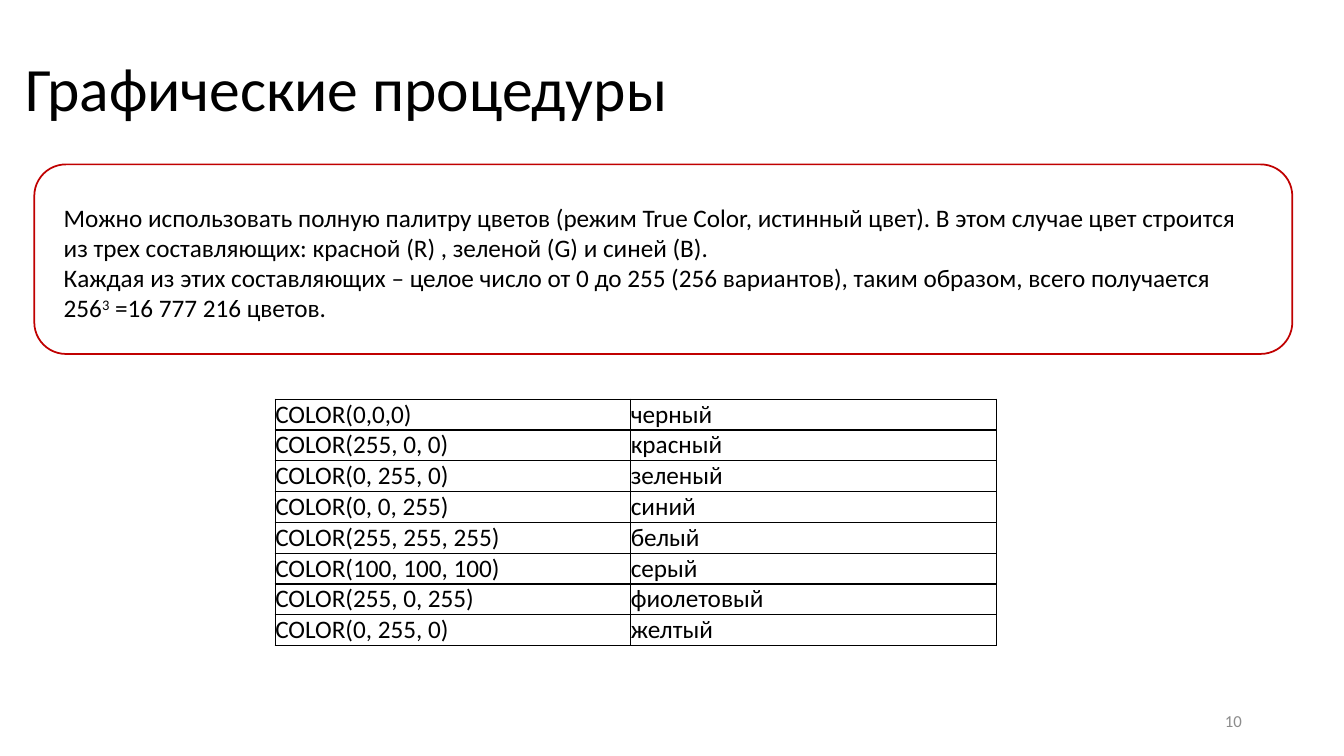
from typing import NamedTuple

from lxml import etree
from pptx import Presentation
from pptx.dml.color import RGBColor
from pptx.enum.shapes import MSO_SHAPE
from pptx.enum.text import MSO_ANCHOR, PP_ALIGN
from pptx.oxml.ns import qn
from pptx.util import Pt

ROUNDED = MSO_SHAPE.ROUNDED_RECTANGLE
TOP, MIDDLE, BOTTOM = MSO_ANCHOR.TOP, MSO_ANCHOR.MIDDLE, MSO_ANCHOR.BOTTOM
LEFT, RIGHT = PP_ALIGN.LEFT, PP_ALIGN.RIGHT

FONT = "Calibri"
BLACK = RGBColor(0x00, 0x00, 0x00)
WHITE = RGBColor(0xFF, 0xFF, 0xFF)
RED = RGBColor(0xC0, 0x00, 0x00)
GREY = RGBColor(0x8C, 0x8C, 0x8C)


class ColorRow(NamedTuple):
    call: str
    name: str


COLOR_ROWS = [
    ColorRow("COLOR(0,0,0)", "черный"),
    ColorRow("COLOR(255, 0, 0)", "красный"),
    ColorRow("COLOR(0, 255, 0)", "зеленый"),
    ColorRow("COLOR(0, 0, 255)", "синий"),
    ColorRow("COLOR(255, 255, 255)", "белый"),
    ColorRow("COLOR(100, 100, 100)", "серый"),
    ColorRow("COLOR(255, 0, 255)", "фиолетовый"),
    ColorRow("COLOR(0, 255, 0)", "желтый"),
]
COLUMN_WIDTHS = (254, 261)
ROW_HEIGHT = 22

# Text between a pair of ^ marks is superscript
PALETTE_TEXT = (
    "Можно использовать полную палитру цветов (режим True Color, истинный цвет). "
    "В этом случае цвет строится из трех составляющих: красной (R) , зеленой (G) и синей (B).\n"
    "Каждая из этих составляющих – целое число от 0 до 255 (256 вариантов), "
    "таким образом, всего получается 256^3^ =16 777 216 цветов."
)


def write_text(tf, text: str, *, size: float = 18, color: RGBColor = BLACK,
               align=LEFT, spacing: float = 1.0) -> None:
    for i, line in enumerate(text.split("\n")):
        p = tf.paragraphs[0] if i == 0 else tf.add_paragraph()
        p.alignment = align
        p.line_spacing = spacing
        for j, part in enumerate(line.split("^")):
            r = p.add_run()
            r.text = part
            r.font.name = FONT
            r.font.size = Pt(size)
            r.font.color.rgb = color
            if j % 2:
                r._r.get_or_add_rPr().set("baseline", "30000")


def add_text_box(s, left: float, top: float, width: float, height: float,
                 text: str, **style) -> None:
    tf = s.shapes.add_textbox(Pt(left), Pt(top), Pt(width), Pt(height)).text_frame
    tf.word_wrap = True
    tf.vertical_anchor = MIDDLE
    write_text(tf, text, **style)


def add_palette_panel(s) -> None:
    sp = s.shapes.add_shape(ROUNDED, Pt(24.5), Pt(117.4), Pt(898.6), Pt(135.4))
    sp.shadow.inherit = False
    sp.fill.solid()
    sp.fill.fore_color.rgb = WHITE
    sp.line.color.rgb = RED
    sp.line.width = Pt(1.25)
    tf = sp.text_frame
    tf.word_wrap = True
    tf.vertical_anchor = TOP
    tf.margin_left, tf.margin_top = Pt(14.4), Pt(20.2)
    tf.margin_right, tf.margin_bottom = Pt(20.2), Pt(0)
    write_text(tf, PALETTE_TEXT)


def add_borders(cell) -> None:
    tc_pr = cell._tc.get_or_add_tcPr()
    for side in ("a:lnL", "a:lnR", "a:lnT", "a:lnB"):
        ln = etree.SubElement(tc_pr, qn(side), w=str(Pt(1)))
        fill = etree.SubElement(ln, qn("a:solidFill"))
        etree.SubElement(fill, qn("a:srgbClr"), val=str(BLACK))


def add_color_table(s) -> None:
    table = s.shapes.add_table(
        len(COLOR_ROWS), len(COLUMN_WIDTHS), Pt(196.6), Pt(285.1),
        Pt(sum(COLUMN_WIDTHS)), Pt(ROW_HEIGHT * len(COLOR_ROWS))).table
    table.first_row = table.horz_banding = False
    for column, width in zip(table.columns, COLUMN_WIDTHS):
        column.width = Pt(width)
    for i, row in enumerate(COLOR_ROWS):
        table.rows[i].height = Pt(ROW_HEIGHT)
        for j, text in enumerate(row):
            cell = table.cell(i, j)
            cell.margin_left = cell.margin_right = Pt(0)
            cell.margin_top = cell.margin_bottom = Pt(0)
            cell.vertical_anchor = BOTTOM
            add_borders(cell)
            cell.fill.background()
            write_text(cell.text_frame, text)


def main() -> None:
    prs = Presentation()
    prs.slide_width, prs.slide_height = Pt(960), Pt(540)
    s = prs.slides.add_slide(prs.slide_layouts[6])

    # Title and slide number
    add_text_box(s, 10.8, 13, 828, 104.4, "Графические процедуры", size=44, spacing=0.9)
    add_text_box(s, 678.2, 500.4, 216, 28.8, "10", size=12, color=GREY, align=RIGHT)

    # Explanation and colour examples
    add_palette_panel(s)
    add_color_table(s)

    prs.save("out.pptx")


if __name__ == "__main__":
    main()
